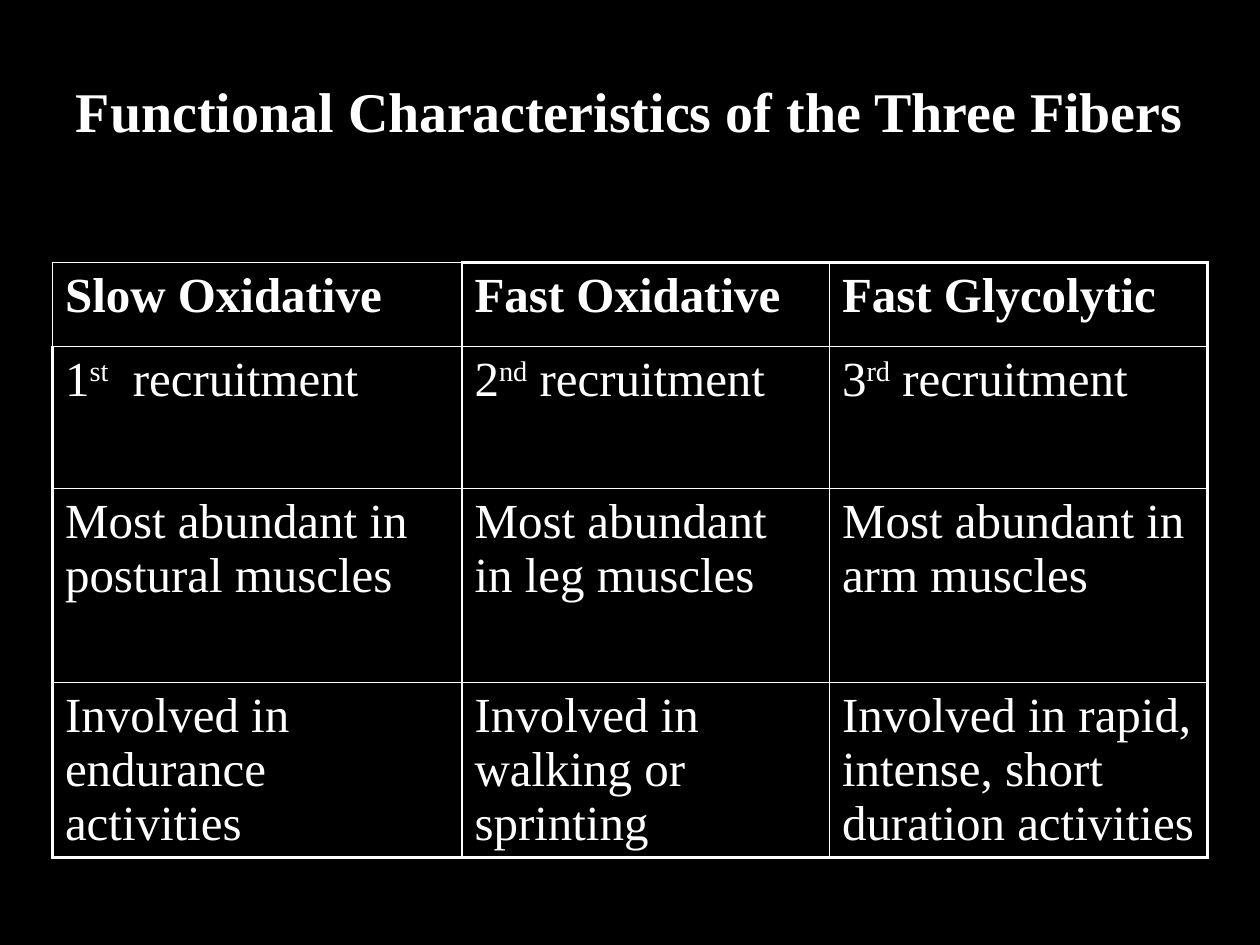
from lxml import etree
from pptx import Presentation
from pptx.dml.color import RGBColor
from pptx.enum import text as t
from pptx.oxml import ns
from pptx.util import Pt

BLACK = RGBColor(0, 0, 0)
WHITE = RGBColor(255, 255, 255)
FONT = "Times New Roman"
THIN, THICK = Pt(1), Pt(2.25)


def write(paragraph, content, size=28, bold=False, align=t.PP_ALIGN.LEFT):
    paragraph.alignment = align
    for index, part in enumerate(content.split("^")):
        run = paragraph.add_run()
        run.text = part
        run.font.name = FONT
        run.font.size = Pt(size)
        run.font.bold = bold
        run.font.color.rgb = WHITE
        if index % 2:
            run.font._element.set("baseline", "30000")


def add_border(cell, side, width):
    properties = cell._tc.get_or_add_tcPr()
    line = etree.SubElement(properties, ns.qn(f"a:ln{side}"), w=str(int(width)))
    fill = etree.SubElement(line, ns.qn("a:solidFill"))
    etree.SubElement(fill, ns.qn("a:srgbClr"), val=str(WHITE))


presentation = Presentation()
presentation.slide_width, presentation.slide_height = Pt(720), Pt(540)
slide = presentation.slides.add_slide(presentation.slide_layouts[5])
slide.background.fill.solid()
slide.background.fill.fore_color.rgb = BLACK

title = slide.shapes.title
title.left, title.top, title.width, title.height = Pt(24), Pt(24), Pt(672), Pt(78)
title.line.color.rgb = BLACK
title.line.width = Pt(0.75)
title.text_frame.vertical_anchor = t.MSO_ANCHOR.MIDDLE
write(title.text_frame.paragraphs[0], "Functional Characteristics of the Three Fibers",
      size=32, bold=True, align=t.PP_ALIGN.CENTER)

rows = [
    ["Slow Oxidative", "Fast Oxidative", "Fast Glycolytic"],
    ["1^st^  recruitment", "2^nd^ recruitment", "3^rd^ recruitment"],
    ["Most abundant in postural muscles", "Most abundant in leg muscles",
     "Most abundant in arm muscles"],
    ["Involved in endurance activities", "Involved in walking or sprinting",
     "Involved in rapid, intense, short duration activities"],
]
column_widths = [234, 210, 216]
row_heights = [48, 81.25, 110.75, 100]

table = slide.shapes.add_table(len(rows), len(column_widths), Pt(30), Pt(150),
                               Pt(sum(column_widths)), Pt(sum(row_heights))).table
table.first_row = True
table.horz_banding = False
for column, width in zip(table.columns, column_widths):
    column.width = Pt(width)
for row, height in zip(table.rows, row_heights):
    row.height = Pt(height)

last_row, last_column = len(rows) - 1, len(column_widths) - 1
for r, row in enumerate(rows):
    for c, content in enumerate(row):
        cell = table.cell(r, c)
        write(cell.text_frame.paragraphs[0], content, bold=r == 0)
        outer = {"L": c == 0 and r > 0, "R": c == last_column,
                 "T": r == 0 and c > 0, "B": r == last_row}
        for side, is_outer in outer.items():
            add_border(cell, side, THICK if is_outer else THIN)
        cell.fill.solid()
        cell.fill.fore_color.rgb = BLACK

presentation.save("out.pptx")
